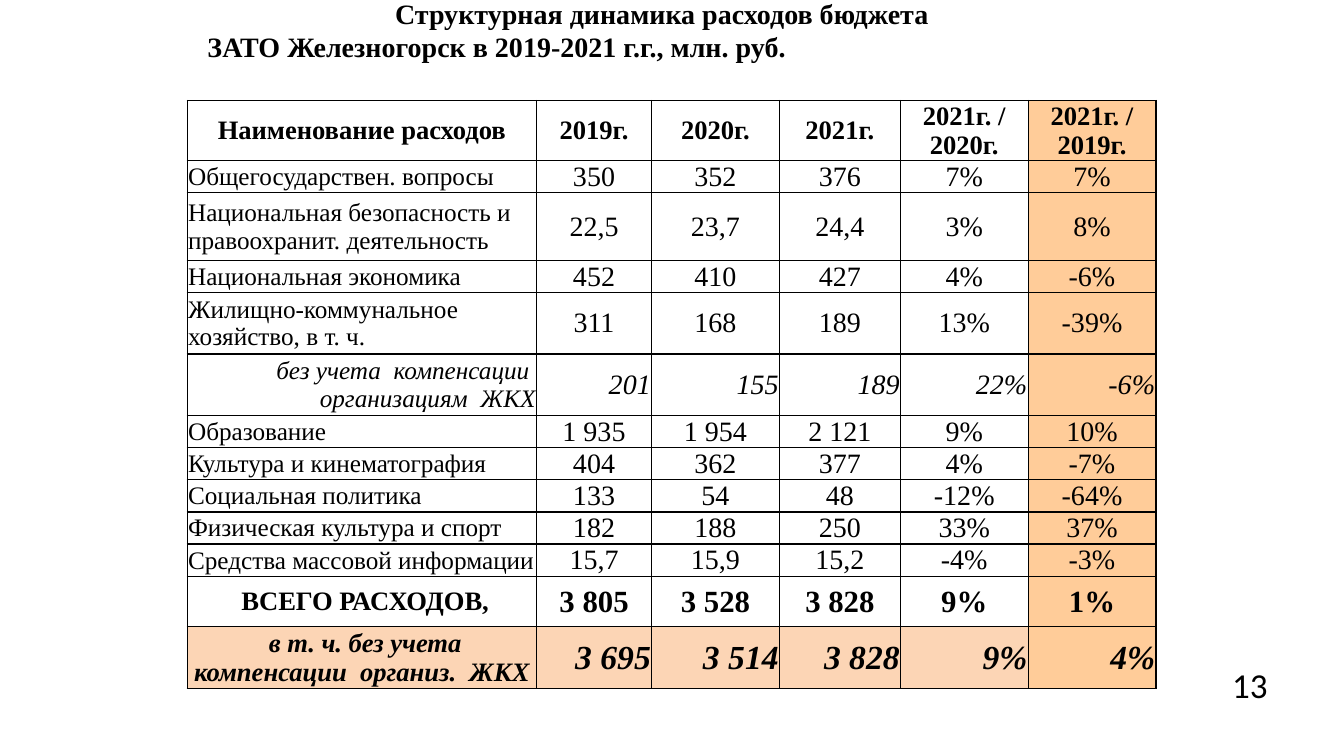
from lxml.etree import SubElement
from pptx import Presentation
from pptx.dml.color import RGBColor
from pptx.enum.text import MSO_ANCHOR, PP_ALIGN as AL
from pptx.oxml.ns import qn
from pptx.util import Cm, Pt

SERIF = "Times New Roman"
BLACK, WHITE, PEACH, ORANGE = "000000", "FFFFFF", "FCD5B5", "FFCC99"

COL_WIDTHS = [8.8, 2.9, 3.22, 3.05, 3.22, 3.22]

STYLES = {
    "header": dict(aligns=(AL.CENTER, AL.CENTER), sizes=(19, 19), bold=True),
    "item": dict(aligns=(AL.LEFT, AL.CENTER), sizes=(18, 20)),
    "detail": dict(aligns=(AL.RIGHT, AL.RIGHT), sizes=(18, 20), italic=True),
    "total": dict(aligns=(AL.CENTER, AL.CENTER), sizes=(19, 22), bold=True),
    "total_detail": dict(aligns=(AL.CENTER, AL.RIGHT), sizes=(19, 24),
                         bold=True, italic=True, fill=PEACH),
}

ROWS = [
    ("header", 1.52, ["Наименование расходов", "2019г.", "2020г.", "2021г.",
                      "2021г. / 2020г.", "2021г. / 2019г."]),
    ("item", 0.81, ["Общегосударствен. вопросы", "350", "352", "376", "7%", "7%"]),
    ("item", 1.7, ["Национальная безопасность и правоохранит. деятельность",
                   "22,5", "23,7", "24,4", "3%", "8%"]),
    ("item", 0.81, ["Национальная экономика", "452", "410", "427", "4%", "-6%"]),
    ("item", 1.55, ["Жилищно-коммунальное хозяйство, в т. ч.",
                    "311", "168", "189", "13%", "-39%"]),
    ("detail", 1.55, ["без учета  компенсации  организациям  ЖКХ",
                      "201", "155", "189", "22%", "-6%"]),
    ("item", 0.81, ["Образование", "1 935", "1 954", "2 121", "9%", "10%"]),
    ("item", 0.81, ["Культура и кинематография", "404", "362", "377", "4%", "-7%"]),
    ("item", 0.81, ["Социальная политика", "133", "54", "48", "-12%", "-64%"]),
    ("item", 0.81, ["Физическая культура и спорт", "182", "188", "250", "33%", "37%"]),
    ("item", 0.81, ["Средства массовой информации",
                    "15,7", "15,9", "15,2", "-4%", "-3%"]),
    ("total", 1.27, [" ВСЕГО РАСХОДОВ,", "3 805", "3 528", "3 828", "9%", "1%"]),
    ("total_detail", 1.55, [" в т. ч. без учета компенсации  организ.  ЖКХ",
                            "3 695", "3 514", "3 828", "9%", "4%"]),
]


def rgb(value):
    return RGBColor.from_string(value)


def add_run(p, text, size, font=SERIF, bold=False, italic=False):
    r = p.add_run()
    r.text = text
    r.font.size = Pt(size)
    r.font.name = font
    r.font.bold = bold
    r.font.italic = italic
    r.font.color.rgb = rgb(BLACK)


def add_text(s, box, lines, size, font=SERIF, bold=False, top=0.13):
    tf = s.shapes.add_textbox(*map(Cm, box)).text_frame
    tf.word_wrap = True
    tf.margin_top = Cm(top)
    for i, (text, align) in enumerate(lines):
        p = tf.add_paragraph() if i else tf.paragraphs[0]
        p.alignment = align
        add_run(p, text, size, font, bold)


def add_borders(cell):
    tcPr = cell._tc.get_or_add_tcPr()
    for side in ("a:lnL", "a:lnR", "a:lnT", "a:lnB"):
        ln = SubElement(tcPr, qn(side), w=str(Pt(1)))
        fill = SubElement(ln, qn("a:solidFill"))
        SubElement(fill, qn("a:srgbClr"), val=BLACK)


def fill_cell(cell, text, align, size, bold, italic, color):
    cell.margin_left = cell.margin_right = cell.margin_top = Cm(0.02)
    cell.margin_bottom = 0
    cell.vertical_anchor = MSO_ANCHOR.MIDDLE
    p = cell.text_frame.paragraphs[0]
    p.alignment = align
    p.line_spacing = Pt(size * 1.1)
    add_run(p, text, size, bold=bold, italic=italic)
    add_borders(cell)
    cell.fill.solid()
    cell.fill.fore_color.rgb = rgb(color)


def add_expenses(s, left, top):
    width, height = sum(COL_WIDTHS), sum(row[1] for row in ROWS)
    table = s.shapes.add_table(len(ROWS), len(COL_WIDTHS), Cm(left), Cm(top),
                               Cm(width), Cm(height)).table
    for col, col_width in zip(table.columns, COL_WIDTHS):
        col.width = Cm(col_width)
    last = len(COL_WIDTHS) - 1
    for i, (kind, row_height, texts) in enumerate(ROWS):
        table.rows[i].height = Cm(row_height)
        style = STYLES[kind]
        for j, text in enumerate(texts):
            part = min(j, 1)
            color = ORANGE if j == last else style.get("fill", WHITE)
            fill_cell(table.cell(i, j), text, style["aligns"][part],
                      style["sizes"][part], style.get("bold", False),
                      style.get("italic", False), color)


def main():
    prs = Presentation()
    prs.slide_width, prs.slide_height = Cm(33.87), Cm(19.05)
    s = prs.slides.add_slide(prs.slide_layouts[6])
    add_text(s, (4.98, -0.1, 23.4, 2.26),
             [("Структурная динамика расходов бюджета", AL.CENTER),
              ("ЗАТО Железногорск в 2019-2021 г.г., млн. руб.", AL.LEFT)],
             20, bold=True, top=0)
    add_expenses(s, 4.72, 2.53)
    add_text(s, (30.8, 16.6, 2.9, 1.32), [("13", AL.LEFT)], 25, "Calibri")
    prs.save("out.pptx")


if __name__ == "__main__":
    main()
